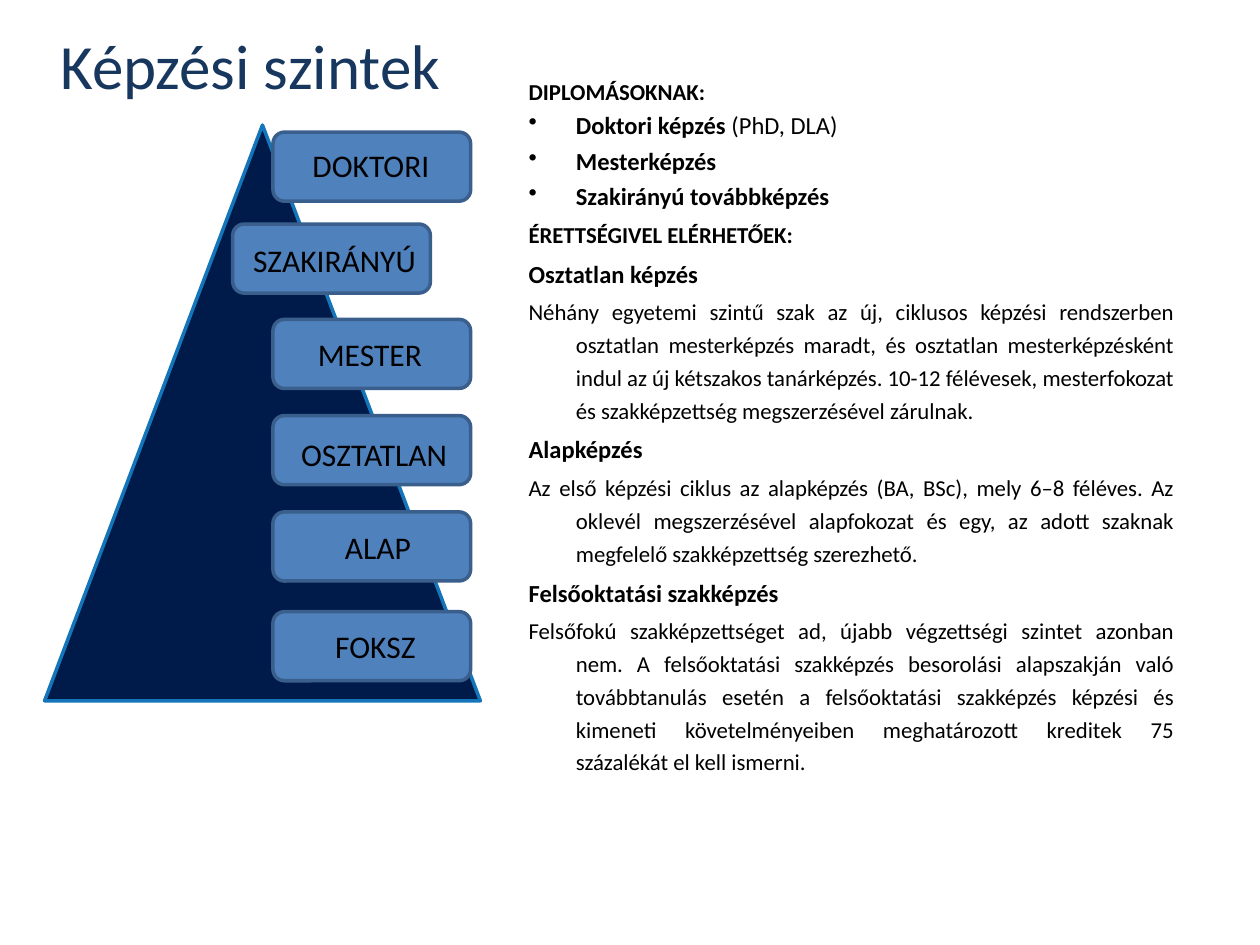
import pptx
import pptx.util
import pptx.dml.color
import pptx.enum.shapes
import pptx.enum.text
import pptx.oxml.ns
import lxml.etree

Pt = pptx.util.Pt
RGBColor = pptx.dml.color.RGBColor
MSO_SHAPE = pptx.enum.shapes.MSO_SHAPE
PP_ALIGN = pptx.enum.text.PP_ALIGN
MSO_ANCHOR = pptx.enum.text.MSO_ANCHOR

BLACK = RGBColor(0x00, 0x00, 0x00)
TITLE_BLUE = RGBColor(0x17, 0x37, 0x5E)
NAVY = RGBColor(0x00, 0x1B, 0x4A)
EDGE_BLUE = RGBColor(0x14, 0x75, 0xBA)
BOX_BLUE = RGBColor(0x4F, 0x81, 0xBD)
BOX_EDGE = RGBColor(0x3A, 0x5F, 0x8C)


def add_run(p, text, size, color=BLACK, bold=False):
    r = p.add_run()
    r.text = text
    fmt = {"name": "Calibri", "size": Pt(size), "bold": bold}
    for key, value in fmt.items():
        setattr(r.font, key, value)
    r.font.color.rgb = color


def add_box(shape, left, top, width, height, fill, line):
    sp = s.shapes.add_shape(shape, Pt(left), Pt(top), Pt(width), Pt(height))
    sp.shadow.inherit = False
    sp.fill.solid()
    sp.fill.fore_color.rgb = fill
    sp.line.color.rgb = line
    sp.line.width = Pt(2)


prs = pptx.Presentation()
prs.slide_width, prs.slide_height = Pt(720), Pt(540)
s = prs.slides.add_slide(prs.slide_layouts[6])

# Title
tf = s.shapes.add_textbox(Pt(6.5), Pt(13), Pt(273.5), Pt(47.5)).text_frame
tf.word_wrap = True
tf.vertical_anchor = MSO_ANCHOR.MIDDLE
p = tf.paragraphs[0]
p.alignment = PP_ALIGN.CENTER
add_run(p, "Képzési szintek", 36, TITLE_BLUE)

# Description: (kind, text, regular-weight ending)
paragraphs = [
    ("section", "DIPLOMÁSOKNAK:", ""),
    ("bullet", "Doktori képzés", " (PhD, DLA)"),
    ("bullet", "Mesterképzés", ""),
    ("bullet", "Szakirányú továbbképzés", ""),
    ("section", "ÉRETTSÉGIVEL ELÉRHETŐEK:", ""),
    ("level", "Osztatlan képzés", ""),
    ("body", "Néhány egyetemi szintű szak az új, ciklusos képzési rendszerben "
     "osztatlan mesterképzés maradt, és osztatlan mesterképzésként indul az új "
     "kétszakos tanárképzés. 10-12 félévesek, mesterfokozat és szakképzettség "
     "megszerzésével zárulnak.", ""),
    ("level", "Alapképzés", ""),
    ("body", "Az első képzési ciklus az alapképzés (BA, BSc), mely 6–8 féléves. "
     "Az oklevél megszerzésével alapfokozat és egy, az adott szaknak megfelelő "
     "szakképzettség szerezhető.", ""),
    ("level", "Felsőoktatási szakképzés", ""),
    ("body", "Felsőfokú szakképzettséget ad, újabb végzettségi szintet azonban "
     "nem. A felsőoktatási szakképzés besorolási alapszakján való továbbtanulás "
     "esetén a felsőoktatási szakképzés képzési és kimeneti követelményeiben "
     "meghatározott kreditek 75 százalékát el kell ismerni.", ""),
]
sizes = {"section": 13, "bullet": 14, "level": 14, "body": 13}
tf = s.shapes.add_textbox(Pt(295), Pt(37.5), Pt(382.5), Pt(467)).text_frame
tf.word_wrap = True
for i, (kind, text, ending) in enumerate(paragraphs):
    p = tf.paragraphs[0] if i == 0 else tf.add_paragraph()
    size = sizes[kind]
    space = 0 if i == 0 or kind == "bullet" else 0.2 * size
    fmt = {"alignment": PP_ALIGN.JUSTIFY, "line_spacing": 1.2,
           "space_before": Pt(space)}
    for key, value in fmt.items():
        setattr(p, key, value)
    # Hanging indent, with a bullet where needed
    pPr = p._p.get_or_add_pPr()
    pPr.set("marL", str(Pt(27)))
    pPr.set("indent", str(Pt(-27)))
    if kind == "bullet":
        bu = lxml.etree.SubElement(pPr, pptx.oxml.ns.qn("a:buChar"))
        bu.set("char", "•")
    add_run(p, text, size, bold=kind != "body")
    if ending:
        add_run(p, ending, size)

# Pyramid
add_box(MSO_SHAPE.ISOSCELES_TRIANGLE, 25.5, 71.5, 249, 329, NAVY, EDGE_BLUE)

# Levels: (label, box left, box top, label left, label top, label width)
levels = [
    ("DOKTORI", 156, 75.5, 171.5, 80, 91),
    ("SZAKIRÁNYÚ", 133, 128, 137.5, 134, 109),
    ("MESTER", 156, 182.5, 174.5, 188, 85),
    ("OSZTATLAN", 156, 237.5, 165, 245, 104.5),
    ("ALAP", 156, 292.5, 190, 298, 73.5),
    ("FOKSZ", 156, 349.5, 184.5, 355, 91),
]
for label, left, top, label_left, label_top, label_width in levels:
    add_box(MSO_SHAPE.ROUNDED_RECTANGLE, left, top, 113, 39.5, BOX_BLUE, BOX_EDGE)
    tb = s.shapes.add_textbox(Pt(label_left), Pt(label_top), Pt(label_width), Pt(29))
    tb.text_frame.word_wrap = True
    add_run(tb.text_frame.paragraphs[0], label, 18)

prs.save("out.pptx")
